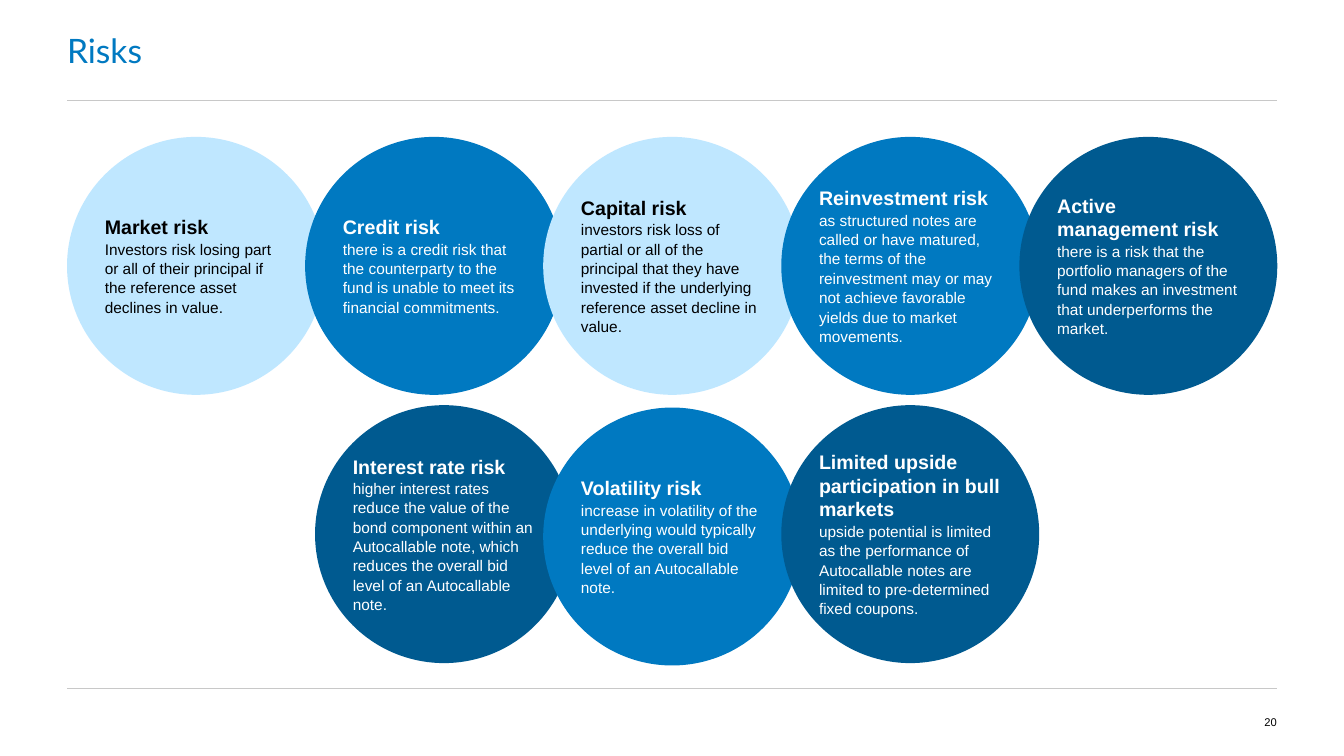
from lxml import etree
from pptx import Presentation
from pptx.dml.color import RGBColor
from pptx.enum.shapes import MSO_CONNECTOR, MSO_SHAPE
from pptx.enum.text import MSO_ANCHOR, PP_ALIGN
from pptx.oxml.ns import qn
from pptx.util import Cm, Pt

ELLIPSE = MSO_SHAPE.OVAL
STRAIGHT = MSO_CONNECTOR.STRAIGHT
MIDDLE = MSO_ANCHOR.MIDDLE
LEFT, RIGHT = PP_ALIGN.LEFT, PP_ALIGN.RIGHT

COLORS = {
    "light": "BFE7FF", "blue": "0079C1", "dark": "005A90",
    "rule": "C8C8C8", "black": "000000", "white": "FFFFFF",
}

TITLE = "Risks"
PAGE_NUMBER = "20"

# column, top in cm, shift to the right in cm, fill, heading, explanation
RISKS = [
    (0, 3.45, 0, "light", "Market risk",
     "Investors risk losing part or all of their principal if the reference "
     "asset declines in value."),
    (1, 3.45, 0, "blue", "Credit risk",
     "there is a credit risk that the counterparty to the fund is unable to "
     "meet its financial commitments."),
    (2, 3.45, 0, "light", "Capital risk",
     "investors risk loss of partial or all of the principal that they have "
     "invested if the underlying reference asset decline in value."),
    (3, 3.45, 0, "blue", "Reinvestment risk",
     "as structured notes are called or have matured, the terms of the "
     "reinvestment may or may not achieve favorable yields due to market "
     "movements."),
    (4, 3.45, 0, "dark", "Active management risk",
     "there is a risk that the portfolio managers of the fund makes an "
     "investment that underperforms the market."),
    (1, 10.21, 0.25, "dark", "Interest rate risk",
     "higher interest rates reduce the value of the bond component within an "
     "Autocallable note, which reduces the overall bid level of an "
     "Autocallable note."),
    (2, 10.27, 0, "blue", "Volatility risk",
     "increase in volatility of the underlying would typically reduce the "
     "overall bid level of an Autocallable note."),
    (3, 10.21, 0, "dark", "Limited upside participation in bull markets",
     "upside potential is limited as the performance of Autocallable notes "
     "are limited to pre-determined fixed coupons."),
]

PAGE_WIDTH, PAGE_HEIGHT = 33.87, 19.05
MARGIN = 1.69
HEADER_RULE, FOOTER_RULE = 2.54, 17.36
DIAMETER, COLUMN_STEP = 6.5, 6.0
BODY_SPACING = 1.05


def color(name):
    return RGBColor.from_string(COLORS[name])


def prepare_frame(shape):
    frame = shape.text_frame
    frame.word_wrap = True
    frame.vertical_anchor = MIDDLE
    frame.margin_left = frame.margin_right = 0
    frame.margin_top = frame.margin_bottom = 0
    return frame


def write(para, text, size, ink, font="Arial", bold=False, align=LEFT):
    para.alignment = align
    span = para.add_run()
    span.text = text
    span.font.name = font
    span.font.size = Pt(size)
    span.font.bold = bold
    span.font.color.rgb = color(ink)


def add_label(page, left, top, width, height, text, **style):
    box = page.shapes.add_textbox(Cm(left), Cm(top), Cm(width), Cm(height))
    write(prepare_frame(box).paragraphs[0], text, **style)


def add_rule(page, height):
    rule = page.shapes.add_connector(
        STRAIGHT, Cm(MARGIN), Cm(height), Cm(PAGE_WIDTH - MARGIN), Cm(height))
    rule.line.color.rgb = color("rule")
    rule.line.width = Pt(0.75)
    etree.SubElement(rule._element.spPr, qn("a:effectLst"))


def add_risk(page, column, top, shift, fill, heading, explanation):
    left = MARGIN + column * COLUMN_STEP + shift
    circle = page.shapes.add_shape(
        ELLIPSE, Cm(left), Cm(top), Cm(DIAMETER), Cm(DIAMETER))
    circle.shadow.inherit = False
    circle.fill.solid()
    circle.fill.fore_color.rgb = color(fill)
    circle.line.fill.background()
    ink = "black" if fill == "light" else "white"
    frame = prepare_frame(circle)
    write(frame.paragraphs[0], heading, 14, ink, bold=True)
    body = frame.add_paragraph()
    body.line_spacing = BODY_SPACING
    write(body, explanation, 11, ink)


def main():
    deck = Presentation()
    deck.slide_width, deck.slide_height = Cm(PAGE_WIDTH), Cm(PAGE_HEIGHT)
    page = deck.slides.add_slide(deck.slide_layouts[6])
    for height in (FOOTER_RULE, HEADER_RULE):
        add_rule(page, height)
    add_label(page, MARGIN, 0, PAGE_WIDTH - 2 * MARGIN, HEADER_RULE, TITLE,
              size=24, ink="blue", font="Lato")
    add_label(page, PAGE_WIDTH - 2 * MARGIN, FOOTER_RULE, MARGIN,
              PAGE_HEIGHT - FOOTER_RULE, PAGE_NUMBER,
              size=8, ink="black", align=RIGHT)
    for risk in RISKS:
        add_risk(page, *risk)
    deck.save("out.pptx")


if __name__ == "__main__":
    main()
